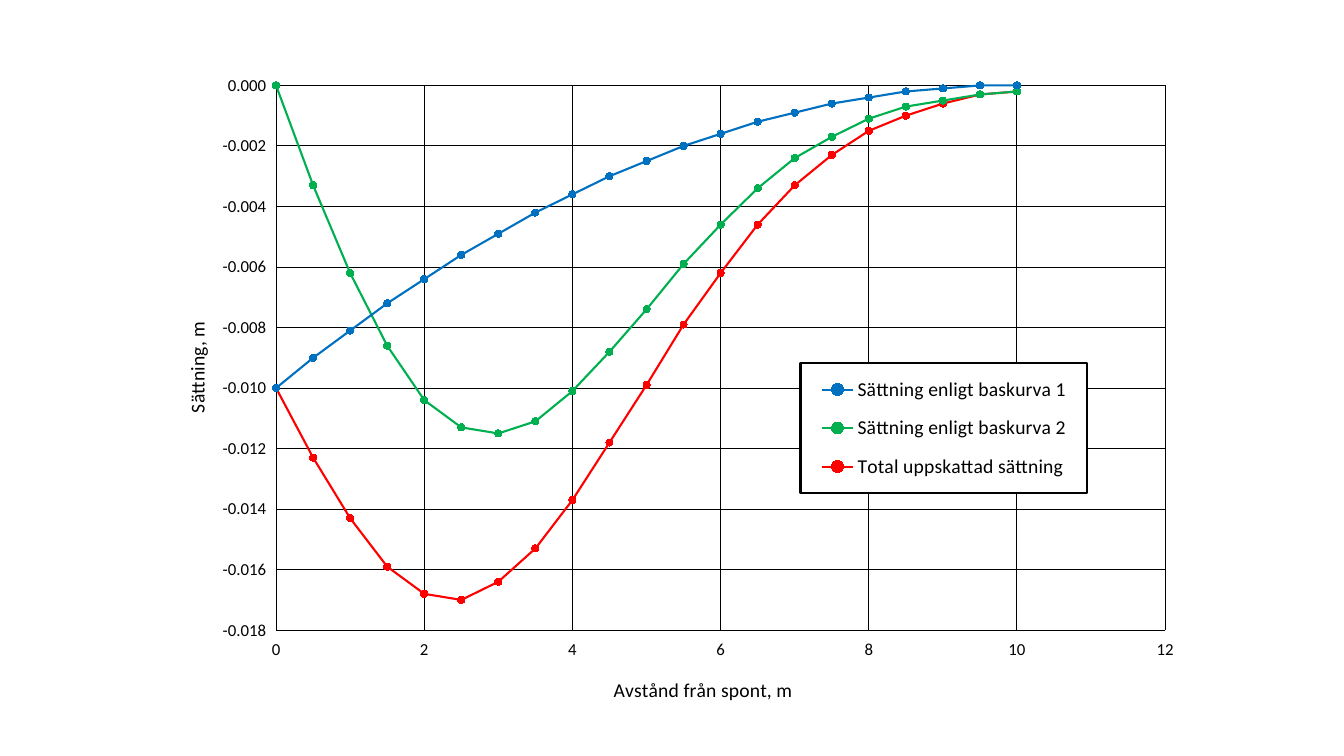
from lxml import etree
from pptx import Presentation
from pptx.chart.data import XyChartData
from pptx.dml.color import RGBColor
from pptx.enum.chart import (XL_CHART_TYPE, XL_LEGEND_POSITION, XL_MARKER_STYLE,
                             XL_TICK_LABEL_POSITION, XL_TICK_MARK)
from pptx.oxml import parse_xml
from pptx.oxml.ns import nsdecls, qn
from pptx.util import Inches, Pt

SCATTER = XL_CHART_TYPE.XY_SCATTER_LINES
RIGHT = XL_LEGEND_POSITION.RIGHT
CIRCLE = XL_MARKER_STYLE.CIRCLE
LOW = XL_TICK_LABEL_POSITION.LOW
NO_TICK = XL_TICK_MARK.NONE

BLACK = RGBColor(0x00, 0x00, 0x00)
BLUE = RGBColor(0x00, 0x70, 0xC0)
GREEN = RGBColor(0x00, 0xB0, 0x50)
RED = RGBColor(0xFF, 0x00, 0x00)

# Settlement every 0.5 m from the sheet pile wall, in tenths of a millimetre
STEP = 0.5
CURVES = [
    ("Sättning enligt baskurva 1", BLUE,
     [-100, -90, -81, -72, -64, -56, -49, -42, -36, -30, -25,
      -20, -16, -12, -9, -6, -4, -2, -1, 0, 0]),
    ("Sättning enligt baskurva 2", GREEN,
     [0, -33, -62, -86, -104, -113, -115, -111, -101, -88, -74,
      -59, -46, -34, -24, -17, -11, -7, -5, -3, -2]),
    ("Total uppskattad sättning", RED,
     [-100, -123, -143, -159, -168, -170, -164, -153, -137, -118, -99,
      -79, -62, -46, -33, -23, -15, -10, -6, -3, -2]),
]


class ChartSlide:
    font = "Calibri"

    def __init__(self, prs):
        self.s = prs.slides.add_slide(prs.slide_layouts[6])

    def style_font(self, font, size):
        font.name = self.font
        font.size = Pt(size)
        font.bold = False
        font.color.rgb = BLACK

    def style_line(self, line, color=BLACK, width=0.75):
        line.color.rgb = color
        line.width = Pt(width)

    def place(self, element, x, y, w=None, h=None, inner=False):
        """Position a chart part by fractions of the chart area."""
        for old in element.findall(qn("c:layout")):
            element.remove(old)
        layout = etree.Element(qn("c:layout"))
        manual = etree.SubElement(layout, qn("c:manualLayout"))
        values = {"layoutTarget": "inner" if inner else None,
                  "xMode": "edge", "yMode": "edge", "x": x, "y": y, "w": w, "h": h}
        for tag, value in values.items():
            if value is not None:
                etree.SubElement(manual, qn("c:" + tag)).set("val", str(value))
        overlay = element.find(qn("c:overlay"))
        if overlay is None:
            element.insert(0, layout)
        else:
            overlay.addprevious(layout)

    def scatter(self, x, y, w, h, curves):
        data = XyChartData()
        for name, _, values in curves:
            series = data.add_series(name)
            for i, value in enumerate(values):
                series.add_data_point(i * STEP, value / 10000)
        chart = self.s.shapes.add_chart(SCATTER, Inches(x), Inches(y),
                                        Inches(w), Inches(h), data).chart
        chart.has_title = False
        self.style_font(chart.font, 10)
        plot = chart.plots[0]
        plot.vary_by_categories = False
        for series, (_, color, _) in zip(plot.series, curves):
            series.smooth = False
            self.style_line(series.format.line, color, 1.5)
            marker = series.marker
            marker.style, marker.size = CIRCLE, 5
            marker.format.fill.solid()
            marker.format.fill.fore_color.rgb = color
            self.style_line(marker.format.line, color)
        return chart

    def axis(self, axis, title, low, high, step, fmt, title_at):
        axis.minimum_scale, axis.maximum_scale, axis.major_unit = low, high, step
        axis.has_major_gridlines = True
        self.style_line(axis.major_gridlines.format.line)
        self.style_line(axis.format.line)
        axis.major_tick_mark = axis.minor_tick_mark = NO_TICK
        axis.tick_label_position = LOW
        labels = axis.tick_labels
        labels.number_format, labels.number_format_is_linked = fmt, False
        self.style_font(labels.font, 12)
        p = axis.axis_title.text_frame.paragraphs[0]
        r = p.add_run()
        r.text = title
        self.style_font(r.font, 14)
        self.place(axis.axis_title._element, *title_at)

    def legend(self, chart, x, y, w, h):
        chart.has_legend = True
        legend = chart.legend
        legend.position = RIGHT
        legend.include_in_layout = False
        self.style_font(legend.font, 14)
        self.place(legend._element, x, y, w, h)
        # White box with a black frame
        box = parse_xml(
            f'<c:spPr {nsdecls("c", "a")}>'
            '<a:solidFill><a:srgbClr val="FFFFFF"/></a:solidFill>'
            f'<a:ln w="{Pt(1.5)}"><a:solidFill><a:srgbClr val="000000"/></a:solidFill></a:ln>'
            '</c:spPr>')
        legend._element.find(qn("c:overlay")).addnext(box)


def main():
    prs = Presentation()
    prs.slide_width, prs.slide_height = Inches(13.33), Inches(7.5)
    slide = ChartSlide(prs)

    # Settlement curves
    chart = slide.scatter(1.58, 0.43, 10.16, 6.64, CURVES)
    plot_area = chart._chartSpace.chart.plotArea
    slide.place(plot_area, 0.114, 0.063, 0.868, 0.814, inner=True)

    # Axes and legend
    slide.axis(chart.category_axis, "Avstånd från spont, m", 0, 12, 2,
               "General", (0.44, 0.94))
    slide.axis(chart.value_axis, "Sättning, m", -0.018, 0, 0.002,
               "#,##0.000", (0.02, 0.41))
    slide.legend(chart, 0.626, 0.478, 0.28, 0.194)

    prs.save("out.pptx")


if __name__ == "__main__":
    main()
